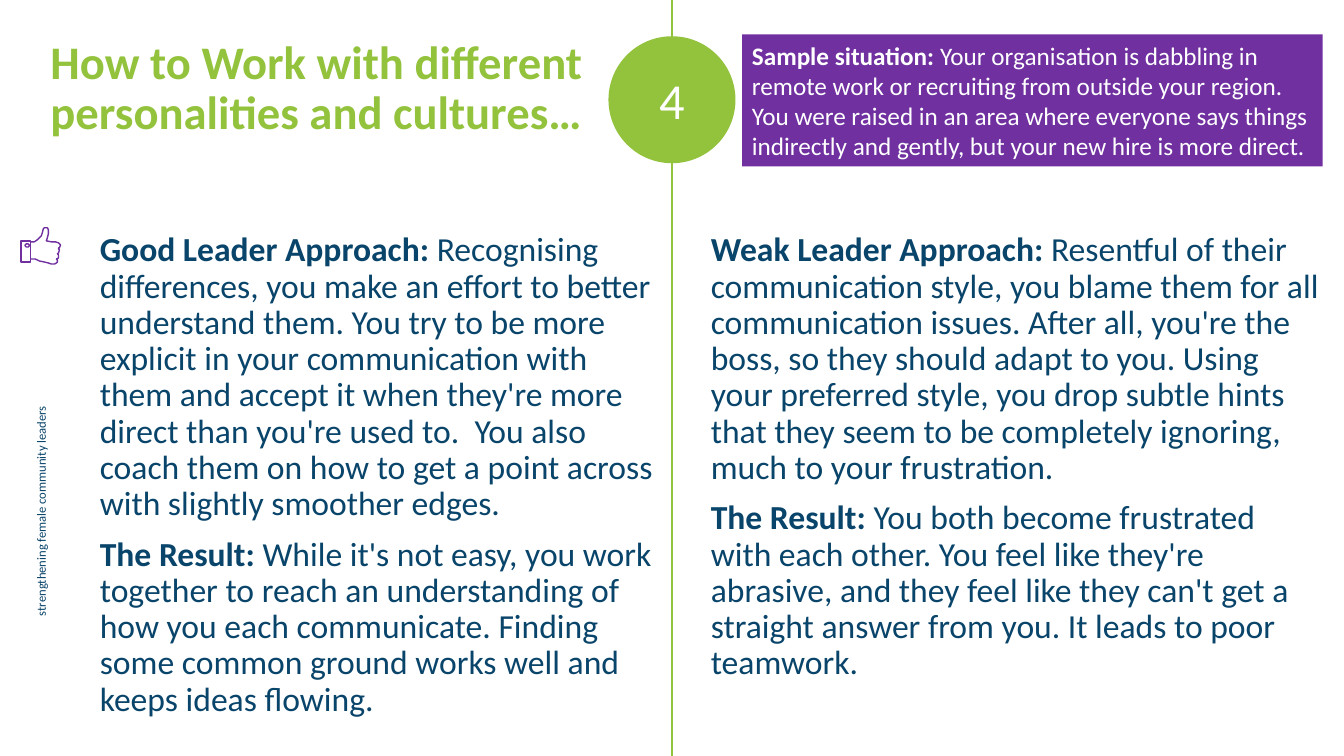
from math import cos, pi, sin
from pptx import Presentation, util as u
from pptx.dml.color import RGBColor
from pptx.enum import shapes, text
from pptx.oxml.ns import qn

# Content
HEADING = "How to Work with different personalities and cultures…"
NUMBER = "4"
TAGLINE = "strengthening female community leaders"
SITUATION = ("Sample situation: ",
             "Your organisation is dabbling in remote work or recruiting from outside your region. "
             "You were raised in an area where everyone says things indirectly and gently, "
             "but your new hire is more direct.")
GOOD = [
    ("Good Leader Approach: ",
     "Recognising differences, you make an effort to better understand them. You try to be more "
     "explicit in your communication with them and accept it when they're more direct than "
     "you're used to.  You also coach them on how to get a point across with slightly smoother edges."),
    ("The Result: ",
     "While it's not easy, you work together to reach an understanding of how you each "
     "communicate. Finding some common ground works well and keeps ideas flowing."),
]
WEAK = [
    ("Weak Leader Approach: ",
     "Resentful of their communication style, you blame them for all communication issues. "
     "After all, you're the boss, so they should adapt to you. Using your preferred style, you "
     "drop subtle hints that they seem to be completely ignoring, much to your frustration."),
    ("The Result: ",
     "You both become frustrated with each other. You feel like they're abrasive, and they feel "
     "like they can't get a straight answer from you. It leads to poor teamwork."),
]
COLORS = {"green": "93C23D", "purple": "7030A0", "navy": "09446A", "white": "FFFFFF"}
FONT = "Calibri"

# Layout in inches
WIDTH, HEIGHT = 13.33, 7.5
MIDDLE = WIDTH / 2
TOP, BAND = 0.34, 1.31
BODY_TOP, BODY_HEIGHT = 2.26, 4.07
CIRCLE = 1.26

# Thumbs-up outline, in hundredths of an inch on the slide
CUFF = [(21, 239), (21, 260), (30, 260), (30, 239)]
BUTTON = [(27 + 2 * cos(i * pi / 6), 243.5 + 1.6 * sin(i * pi / 6)) for i in range(12)]
HAND = [(31, 257), (35, 257), (39, 259), (44, 260), (48, 261), (51, 262), (54, 262),
        (56, 261), (57, 260), (57, 258), (56.5, 257), (58, 256), (58.3, 253), (57.3, 252),
        (58.3, 251), (59, 248), (58.3, 247), (58, 246.4), (59, 246), (59.5, 243), (59.3, 242),
        (58, 241), (55, 240), (51, 240), (46, 239), (47, 236), (48, 232), (48, 228),
        (47, 226.5), (46, 226), (44, 226), (43, 227), (42.5, 231), (41, 234), (39, 236),
        (37, 238), (34, 240), (31, 240)]


def rgb(name):
    return RGBColor.from_string(COLORS[name])


def box(*lengths):
    return [u.Inches(length) for length in lengths]


def place(shape, *lengths):
    shape.left, shape.top, shape.width, shape.height = box(*lengths)


def write(shape, paragraphs, size, color, anchor=text.MSO_ANCHOR.TOP,
          align=text.PP_ALIGN.LEFT, spacing=None, before=0, bold=None):
    """Each paragraph is a tuple of runs; the first of two runs is bold."""
    frame = shape.text_frame
    frame.word_wrap, frame.auto_size = True, text.MSO_AUTO_SIZE.NONE
    frame.vertical_anchor = anchor
    for i, runs in enumerate(paragraphs):
        par = frame.add_paragraph() if i else frame.paragraphs[0]
        par.alignment, par.line_spacing, par.space_before = align, spacing, u.Pt(before)
        par.font.name, par.font.size, par.font.bold = FONT, u.Pt(size), bold
        par.font.color.rgb = rgb(color)
        for j, words in enumerate(runs):
            run = par.add_run()
            run.text = words
            if len(runs) > 1:
                run.font.bold = j == 0
    return frame


def panel(kind, lengths, color):
    shape = slide.shapes.add_shape(kind, *box(*lengths))
    shape.shadow.inherit = False
    shape.fill.solid()
    shape.fill.fore_color.rgb = rgb(color)
    shape.line.fill.background()
    return shape


def outline(contours, closed=True):
    start = contours[0][0]
    builder = slide.shapes.build_freeform(*start, scale=u.Inches(1) / 100)
    for i, points in enumerate(contours):
        if i:
            builder.move_to(*points[0])
        builder.add_line_segments(points[1:], close=closed)
    shape = builder.convert_to_shape()
    shape.shadow.inherit = False
    shape.fill.background()
    shape.line.color.rgb, shape.line.width = rgb("purple"), u.Pt(1)


prs = Presentation()
prs.slide_width, prs.slide_height = box(WIDTH, HEIGHT)
slide = prs.slides.add_slide(prs.slide_layouts[3])
heading, good, weak = list(slide.placeholders)[:3]

# Heading and the two approaches
place(heading, 0.4, TOP, 5.64, BAND)
write(heading, [(HEADING,)], 33.3, "green", spacing=0.9, bold=True)
for column, paragraphs, left, width in [(good, GOOD, 0.89, 5.77), (weak, WEAK, 6.95, 6.24)]:
    place(column, left, BODY_TOP, width, BODY_HEIGHT)
    frame = write(column, paragraphs, 24, "navy", spacing=0.9, before=10)
    for par in frame.paragraphs:
        props = par._p.get_or_add_pPr()
        props.set("marL", "0")
        props.set("indent", "0")
        props.append(props.makeelement(qn("a:buNone"), {}))
        # Bullet setting comes before the default run properties
        props.append(props.find(qn("a:defRPr")))

# Divider and number
divider = slide.shapes.add_connector(shapes.MSO_CONNECTOR.STRAIGHT, *box(MIDDLE, 0, MIDDLE, HEIGHT))
divider.line.color.rgb, divider.line.width = rgb("green"), u.Pt(1)
divider_props = divider._element.spPr
divider_props.append(divider_props.makeelement(qn("a:effectLst"), {}))
number = panel(shapes.MSO_SHAPE.OVAL, (MIDDLE - CIRCLE / 2, 0.36, CIRCLE, CIRCLE), "green")
frame = write(number, [(NUMBER,)], 36, "white", align=text.PP_ALIGN.CENTER, spacing=0.9)
frame.margin_top = u.Inches(0.21)

# Sample situation
situation = panel(shapes.MSO_SHAPE.RECTANGLE, (7.36, TOP, 5.76, BAND), "purple")
write(situation, [SITUATION], 18, "white", anchor=text.MSO_ANCHOR.MIDDLE)

# Sideways tagline
tagline = slide.shapes.add_textbox(*box(-0.76, 4.92, 2.33, 0.25))
tagline.rotation = 270
write(tagline, [(TAGLINE,)], 9, "navy")

# Thumbs-up icon
outline([CUFF, BUTTON])
outline([HAND], closed=False)

prs.save("out.pptx")
